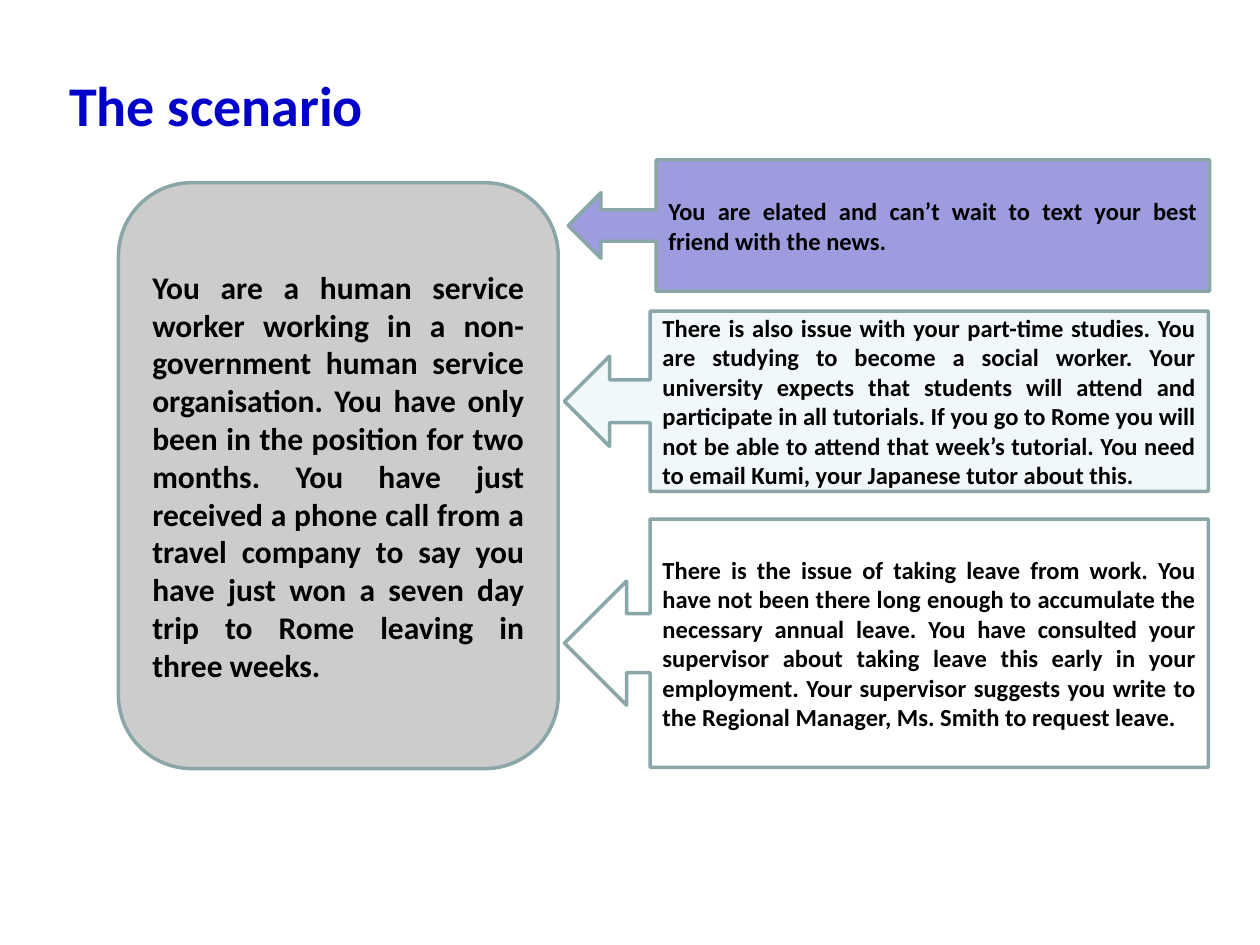
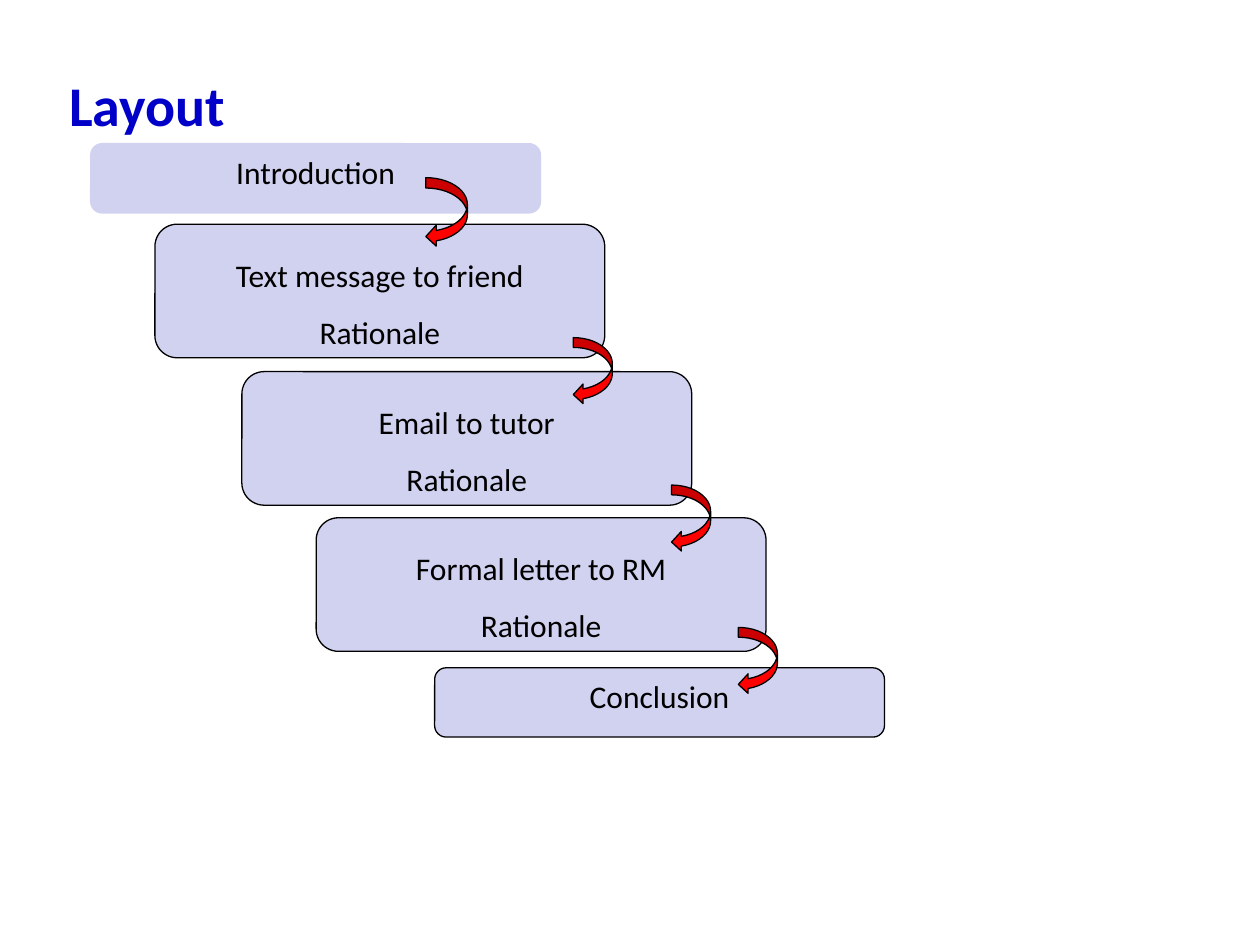
from pptx import Presentation
from pptx.dml.color import RGBColor
from pptx.enum.shapes import MSO_SHAPE as Preset
from pptx.enum.text import MSO_ANCHOR as Anchor, PP_ALIGN as Align
from pptx.util import Inches, Pt

# Content
SCENARIO_TITLE = "The scenario"
SCENARIO = (
    "You are a human service worker working in a non-government human service "
    "organisation. You have only been in the position for two months. You have just "
    "received a phone call from a travel company to say you have just won a seven day "
    "trip to Rome leaving in three weeks."
)
# Text, fill, (left, top, width, height), share of the width taken by the box
CONSEQUENCES = [
    ("You are elated and can’t wait to text your best friend with the news.",
     "friend", (4.51, 1.27, 5.09, 1.04), 0.863),
    ("There is also issue with your part-time studies. You are studying to become a "
     "social worker. Your university expects that students will attend and participate "
     "in all tutorials. If you go to Rome you will not be able to attend that week’s "
     "tutorial. You need to email Kumi, your Japanese tutor about this.",
     "tutor", (4.48, 2.47, 5.11, 1.43), 0.867),
    ("There is the issue of taking leave from work. You have not been there long enough "
     "to accumulate the necessary annual leave. You have consulted your supervisor about "
     "taking leave this early in your employment. Your supervisor suggests you write to "
     "the Regional Manager, Ms. Smith to request leave.",
     "manager", (4.48, 4.12, 5.11, 1.97), 0.867),
]

LAYOUT_TITLE = "Layout"
# Lines of the step, left, top, border
STEPS = [
    (["Introduction"], 0.72, 1.14, "step"),
    (["Text message to friend", "Rationale"], 1.23, 1.78, "ink"),
    (["Email to tutor", "Rationale"], 1.92, 2.95, "ink"),
    (["Formal letter to RM", "Rationale"], 2.51, 4.11, "ink"),
    (["Conclusion"], 3.45, 5.3, "ink"),
]
STEP_WIDTH = 3.57
STEP_HEIGHTS = {1: 0.55, 2: 1.06}  # by number of lines
TURNS = [
    (3.38, 1.41, 0.33, 0.55),
    (4.55, 2.68, 0.31, 0.53),
    (5.33, 3.85, 0.31, 0.53),
    (5.86, 4.98, 0.31, 0.53),
]

# Shared style
FONT = "Calibri"
COLOURS = {
    "title": "0000C8", "ink": "000000", "outline": "8AA6A8", "scenario": "CCCCCC",
    "friend": "9C9CDF", "tutor": "F0F8F9", "manager": "FFFFFF",
    "step": "D1D1F0", "turn": "FF0000",
}


def colour(name):
    return RGBColor.from_string(COLOURS[name])


def write(frame, lines, size, ink="ink", bold=False, align=Align.LEFT,
          anchor=Anchor.MIDDLE, spacing=1.0):
    frame.word_wrap = True
    frame.vertical_anchor = anchor
    for index, line in enumerate(lines):
        paragraph = frame.add_paragraph() if index else frame.paragraphs[0]
        paragraph.text = line
        paragraph.alignment = align
        paragraph.line_spacing = spacing
        font = paragraph.font
        font.name, font.size, font.bold = FONT, Pt(size), bold
        font.color.rgb = colour(ink)


def add_shape(slide, preset, place, fill, border, weight):
    shape = slide.shapes.add_shape(preset, *map(Inches, place))
    shape.shadow.inherit = False
    shape.fill.solid()
    shape.fill.fore_color.rgb = colour(fill)
    shape.line.color.rgb = colour(border)
    shape.line.width = Pt(weight)
    return shape


def add_titled_slide(deck, title):
    slide = deck.slides.add_slide(deck.slide_layouts[6])
    box = slide.shapes.add_textbox(*map(Inches, (0.45, 0.47, 9.03, 0.71)))
    write(box.text_frame, [title], 32, "title", bold=True)
    return slide


def build_scenario(deck):
    slide = add_titled_slide(deck, SCENARIO_TITLE)
    # Situation on the left
    situation = add_shape(slide, Preset.ROUNDED_RECTANGLE, (0.94, 1.45, 3.49, 4.65),
                          "scenario", "outline", 2)
    write(situation.text_frame, [SCENARIO], 18, bold=True, align=Align.JUSTIFY)
    # Consequences pointing back at it
    for text, fill, place, box_share in CONSEQUENCES:
        callout = add_shape(slide, Preset.LEFT_ARROW_CALLOUT, place, fill, "outline", 2)
        for index, value in enumerate((0.238, 0.25, 0.25, box_share)):
            callout.adjustments[index] = value
        write(callout.text_frame, [text], 14, bold=True, align=Align.JUSTIFY)


def build_layout(deck):
    slide = add_titled_slide(deck, LAYOUT_TITLE)
    # Staircase of steps
    for lines, left, top, border in STEPS:
        place = (left, top, STEP_WIDTH, STEP_HEIGHTS[len(lines)])
        step = add_shape(slide, Preset.ROUNDED_RECTANGLE, place, "step", border, 0.75)
        write(step.text_frame, lines, 18, align=Align.CENTER, anchor=Anchor.TOP,
              spacing=1.5 if len(lines) > 1 else 1.0)
    # Turns from each step to the next
    for place in TURNS:
        add_shape(slide, Preset.CURVED_LEFT_ARROW, place, "turn", "ink", 0.75)


def main():
    deck = Presentation()
    deck.slide_width, deck.slide_height = Inches(10), Inches(7.5)
    build_scenario(deck)
    build_layout(deck)
    deck.save("out.pptx")


if __name__ == "__main__":
    main()
